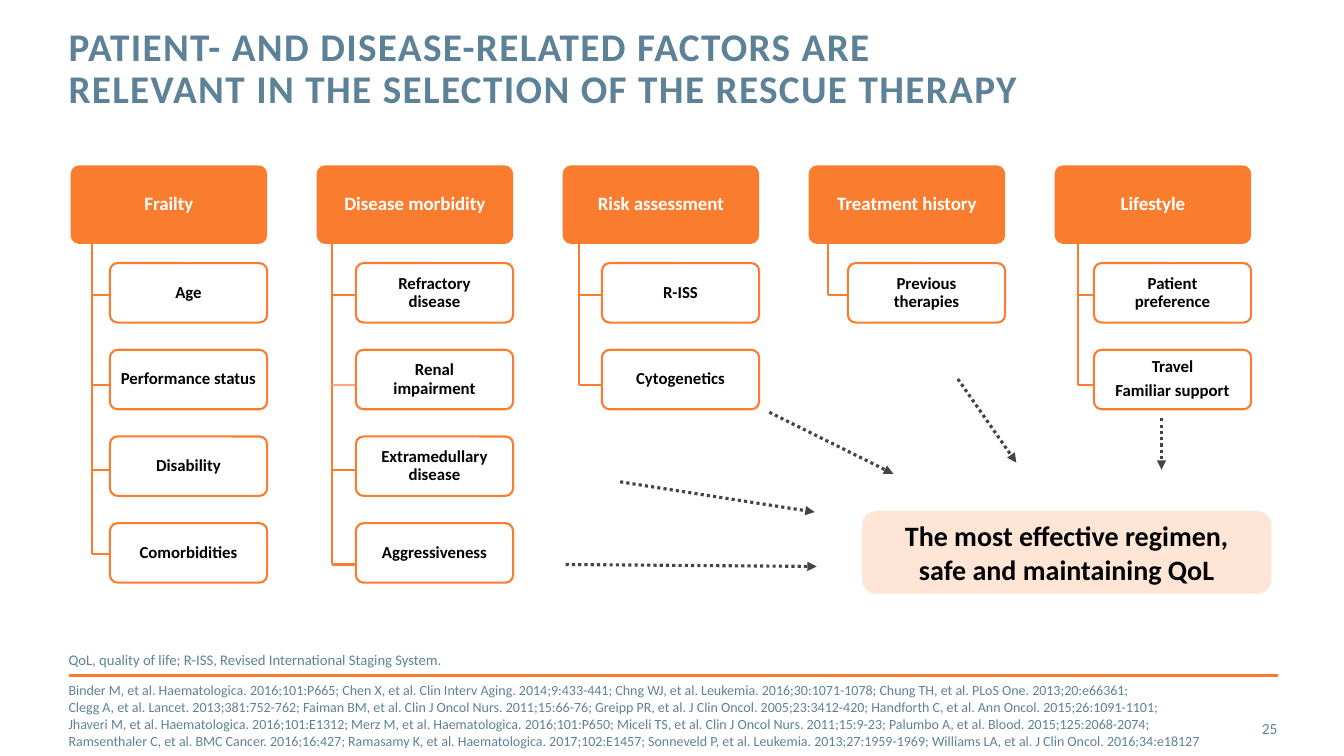
from lxml.etree import SubElement
from pptx import Presentation
from pptx.dml.color import RGBColor
from pptx.enum.dml import MSO_LINE
from pptx.enum.shapes import MSO_CONNECTOR, MSO_SHAPE
from pptx.enum.text import MSO_ANCHOR, PP_ALIGN
from pptx.oxml.ns import qn
from pptx.util import Inches, Pt

COLORS = {
    "orange": "FA7C2E", "pale_orange": "FDA97D", "peach": "FEE5D5",
    "slate": "5D8298", "charcoal": "464346", "black": "000000", "white": "FFFFFF",
}

prs = Presentation()
prs.slide_width, prs.slide_height = Inches(13.33), Inches(7.5)
slide = prs.slides.add_slide(prs.slide_layouts[6])


def add_words(area, text, size, color, bold=False, fill=None, outline=None, corner=0.0,
              align=PP_ALIGN.CENTER, anchor=MSO_ANCHOR.MIDDLE, inset=0.0,
              spacing=None, gap=0, tracking=0):
    """Text box, or rounded box when filled; "|" parts paragraphs, a newline parts lines."""
    place = [Inches(v) for v in area]
    if fill:
        box = slide.shapes.add_shape(MSO_SHAPE.ROUNDED_RECTANGLE, *place)
        box.shadow.inherit = False
        box.adjustments[0] = corner
        box.fill.solid()
        box.fill.fore_color.rgb = RGBColor.from_string(COLORS[fill])
        if outline:
            box.line.color.rgb = RGBColor.from_string(COLORS[outline])
            box.line.width = Pt(1.5)
        else:
            box.line.fill.background()
    else:
        box = slide.shapes.add_textbox(*place)
    frame = box.text_frame
    frame.word_wrap = True
    frame.vertical_anchor = anchor
    frame.margin_left = frame.margin_right = Inches(inset)
    frame.margin_top = frame.margin_bottom = Inches(min(inset, 0.05))
    blocks = text.split("|")
    for i, block in enumerate(blocks):
        paragraph = frame.add_paragraph() if i else frame.paragraphs[0]
        paragraph.alignment = align
        if spacing:
            paragraph.line_spacing = spacing
        if i < len(blocks) - 1:
            paragraph.space_after = Pt(gap)
        for j, words in enumerate(block.split("\n")):
            if j:
                paragraph.add_line_break()
            run = paragraph.add_run()
            run.text = words
            run.font.name = "Calibri"
            run.font.size = Pt(size)
            run.font.bold = bold
            run.font.color.rgb = RGBColor.from_string(COLORS[color])
            if tracking:
                run.font._element.set("spc", str(tracking * 100))


def add_line(x1, y1, x2, y2, color="orange", width=1.5, arrow=False):
    line = slide.shapes.add_connector(
        MSO_CONNECTOR.STRAIGHT, Inches(x1), Inches(y1), Inches(x2), Inches(y2))
    line.line.color.rgb = RGBColor.from_string(COLORS[color])
    line.line.width = Pt(width)
    if arrow:
        line.line.dash_style = MSO_LINE.ROUND_DOT
        SubElement(line.line._get_or_add_ln(), qn("a:tailEnd"), type="triangle")
    SubElement(line._element.spPr, qn("a:effectLst"))


add_words((0.68, 0.27, 9.56, 0.88),
          "PATIENT- AND DISEASE-RELATED FACTORS ARE "
          "RELEVANT IN THE SELECTION OF THE RESCUE THERAPY",
          28, "slate", bold=True, align=PP_ALIGN.LEFT, anchor=MSO_ANCHOR.TOP,
          spacing=Pt(30), tracking=1)

# Each factor: heading, x of its branch line, y of the last possible branch, items
factors = [
    ("Frailty", 0.91, 5.5, ["Age", "Performance status", "Disability", "Comorbidities"]),
    ("Disease morbidity", 3.29, 5.6,
     ["Refractory\ndisease", "Renal\nimpairment", "Extramedullary disease", "Aggressiveness"]),
    ("Risk assessment", 5.74, 5.5, ["R-ISS", "Cytogenetics"]),
    ("Treatment history", 8.21, 5.5, ["Previous\ntherapies"]),
    ("Lifestyle", 10.69, 5.5, ["Patient\npreference", "Travel|Familiar support"]),
]
for column, (heading, trunk_x, last_y, items) in enumerate(factors):
    left = 0.7 + 2.44 * column
    branch_ys = [2.93, 3.82, 4.66, last_y][:len(items)]
    add_line(trunk_x, 2.3, trunk_x, branch_ys[-1])
    add_words((left, 1.64, 1.95, 0.78), heading, 13.5, "white", bold=True,
              fill="orange", corner=0.11, inset=0.05, spacing=0.9)
    for row, (item, branch_y) in enumerate(zip(items, branch_ys)):
        branch_color = "pale_orange" if item.startswith("Renal") else "orange"
        add_line(trunk_x + 0.52, branch_y, trunk_x, branch_y, branch_color)
        add_words((left + 0.39, 2.61 + 0.86 * row, 1.56, 0.59), item, 12, "black",
                  bold=True, fill="white", outline="orange", corner=0.13,
                  inset=0.04, spacing=0.9, gap=4.2)

for arrow_ends in [(6.15, 4.78, 8.08, 5.08), (7.63, 4.09, 8.86, 4.7), (9.5, 3.76, 10.08, 4.59),
                   (11.52, 4.15, 11.52, 4.66), (5.61, 5.6, 8.1, 5.62)]:
    add_line(*arrow_ends, color="charcoal", width=2.25, arrow=True)

add_words((8.55, 5.07, 4.06, 0.82), "The most effective regimen,\nsafe and maintaining QoL",
          20, "black", bold=True, fill="peach", corner=0.17, inset=0.1)

add_words((0.68, 6.46, 11.74, 0.17),
          "QoL, quality of life; R-ISS, Revised International Staging System.",
          10.5, "slate", align=PP_ALIGN.LEFT)
add_line(0.68, 6.7, 12.68, 6.7, width=2)
references = [
    "Binder M, et al. Haematologica. 2016;101:P665; Chen X, et al. Clin Interv Aging. 2014;9:433-441; "
    "Chng WJ, et al. Leukemia. 2016;30:1071-1078; Chung TH, et al. PLoS One. 2013;20:e66361;",
    "Clegg A, et al. Lancet. 2013;381:752-762; Faiman BM, et al. Clin J Oncol Nurs. 2011;15:66-76; "
    "Greipp PR, et al. J Clin Oncol. 2005;23:3412-420; Handforth C, et al. Ann Oncol. 2015;26:1091-1101;",
    "Jhaveri M, et al. Haematologica. 2016;101:E1312; Merz M, et al. Haematologica. 2016;101:P650; "
    "Miceli TS, et al. Clin J Oncol Nurs. 2011;15:9-23; Palumbo A, et al. Blood. 2015;125:2068-2074;",
    "Ramsenthaler C, et al. BMC Cancer. 2016;16:427; Ramasamy K, et al. Haematologica. 2017;102:E1457; "
    "Sonneveld P, et al. Leukemia. 2013;27:1959-1969; Williams LA, et al. J Clin Oncol. 2016;34:e18127",
]
add_words((0.68, 6.9, 11.74, 0.4), "\n".join(references), 10, "slate", align=PP_ALIGN.LEFT)
add_words((11.81, 7.03, 0.86, 0.4), "25", 11, "slate", align=PP_ALIGN.RIGHT)

prs.save("out.pptx")
